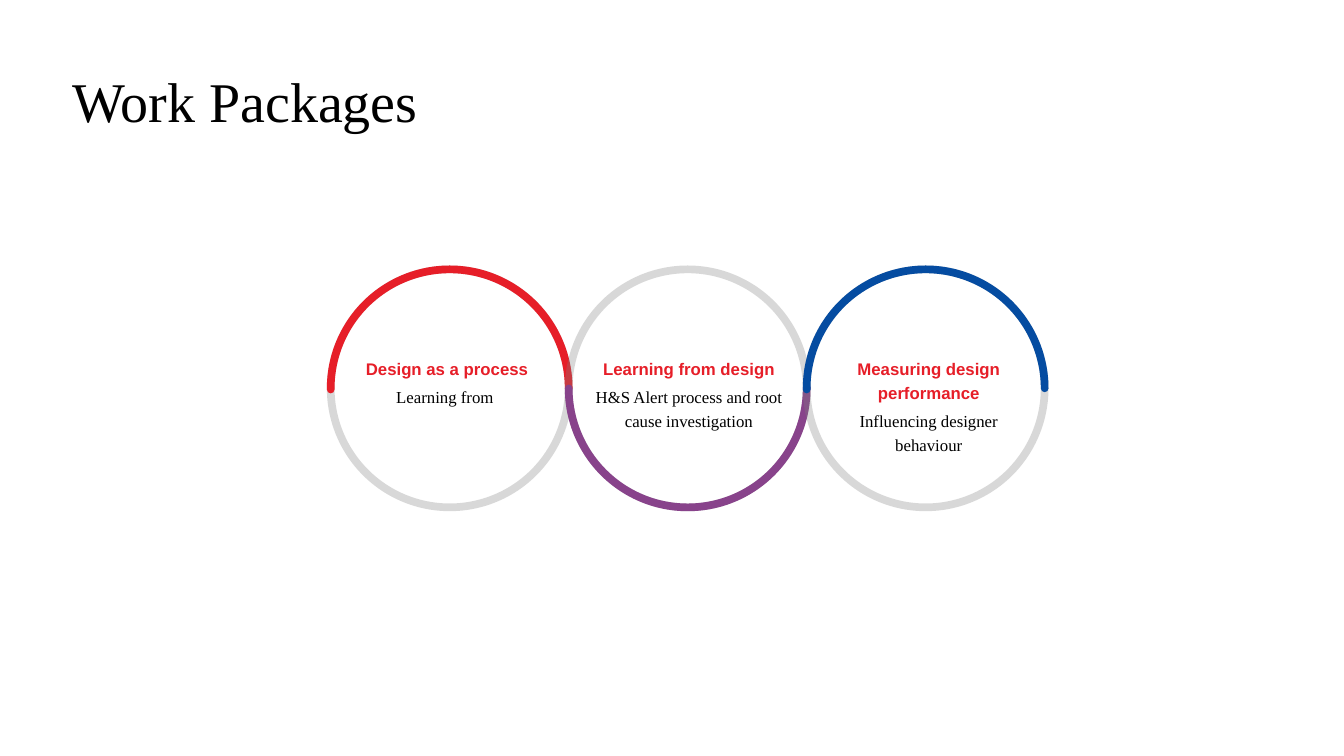
from lxml.etree import SubElement
from pptx import Presentation
from pptx.dml.color import RGBColor
from pptx.enum.shapes import MSO_SHAPE as SHAPE
from pptx.enum.text import MSO_ANCHOR as ANCHOR, MSO_AUTO_SIZE as AUTO, PP_ALIGN as ALIGN
from pptx.oxml.ns import qn
from pptx.util import Pt

# Content: heading, description, arc colour, arc rotation, left edge of the text
TITLE = "Work Packages"
PACKAGES = [
    ("Design as a process", "Learning from ", "red", 0, 251.3),
    ("Learning from design", "H&S Alert process and root cause investigation", "purple", 180, 424.1),
    ("Measuring design performance", "Influencing designer behaviour", "blue", 0, 595.4),
]

THEME = {
    "red": RGBColor(0xE6, 0x1E, 0x28),
    "purple": RGBColor(0x88, 0x43, 0x8B),
    "blue": RGBColor(0x05, 0x4C, 0xA1),
    "grey": RGBColor(0x80, 0x80, 0x80),
    "black": RGBColor(0, 0, 0),
    "serif": "Times New Roman",
    "sans": "Arial",
    "title_size": 40,
    "text_size": 12,
}

# Layout in points
RING_LEFT, RING_TOP, RING_SIZE, RING_LINE = 236.2, 192.4, 170, 5.5
TEXT_TOP, TEXT_WIDTH = 253.4, 136.1
TEXT_HEIGHTS = (36, 53.3, 70.6)
ARC_START = 107.66


def set_all(obj, values):
    for name, value in values.items():
        setattr(obj, name, value)


def set_frame(tf, auto_size):
    set_all(tf, {"word_wrap": True, "auto_size": auto_size, "vertical_anchor": ANCHOR.TOP,
                 "margin_left": 0, "margin_top": 0, "margin_right": 0, "margin_bottom": 0})


def write(p, text, font, size, color, bold, **spacing):
    set_all(p, spacing)
    r = p.add_run()
    r.text = text
    set_all(r.font, {"name": font, "size": Pt(size), "bold": bold})
    r.font.color.rgb = color


def add_ring(s, kind, left, color):
    sp = s.shapes.add_shape(kind, Pt(left), Pt(RING_TOP), Pt(RING_SIZE), Pt(RING_SIZE))
    sp.shadow.inherit = False
    sp.fill.background()
    sp.line.color.rgb = color
    sp.line.width = Pt(RING_LINE)
    return sp


def add_package(s, i, heading, text, color, rotation, text_left):
    left = RING_LEFT + i * RING_SIZE

    # Pale full circle
    ring = add_ring(s, SHAPE.OVAL, left, THEME["grey"])
    rgb = ring.line._get_or_add_ln().find(".//" + qn("a:srgbClr"))
    SubElement(rgb, qn("a:alpha"), val="30000")

    # Coloured half circle with round ends
    arc = add_ring(s, SHAPE.ARC, left, THEME[color])
    arc.adjustments[0], arc.adjustments[1] = ARC_START, 0
    arc.rotation = rotation
    arc.line._get_or_add_ln().set("cap", "rnd")

    # Heading and description
    box = s.shapes.add_textbox(Pt(text_left), Pt(TEXT_TOP), Pt(TEXT_WIDTH), Pt(TEXT_HEIGHTS[i]))
    tf = box.text_frame
    set_frame(tf, AUTO.SHAPE_TO_FIT_TEXT)
    common = {"alignment": ALIGN.CENTER, "line_spacing": Pt(17.3)}
    size = THEME["text_size"]
    write(tf.paragraphs[0], heading, THEME["sans"], size, THEME["red"], True,
          space_after=Pt(2.7), **common)
    write(tf.add_paragraph(), text, THEME["serif"], size, THEME["black"], False, **common)


def main():
    prs = Presentation()
    prs.slide_width, prs.slide_height = Pt(960), Pt(540)
    s = prs.slides.add_slide(prs.slide_layouts[5])

    # Title
    title = s.shapes.title
    set_all(title, {"left": Pt(51.8), "top": Pt(51.8), "width": Pt(710.6), "height": Pt(41.8)})
    set_frame(title.text_frame, AUTO.NONE)
    write(title.text_frame.paragraphs[0], TITLE, THEME["serif"], THEME["title_size"],
          THEME["black"], False, alignment=ALIGN.LEFT, line_spacing=Pt(44), space_before=Pt(0))

    # Chain of work packages
    for i, package in enumerate(PACKAGES):
        add_package(s, i, *package)

    prs.save("out.pptx")


if __name__ == "__main__":
    main()
